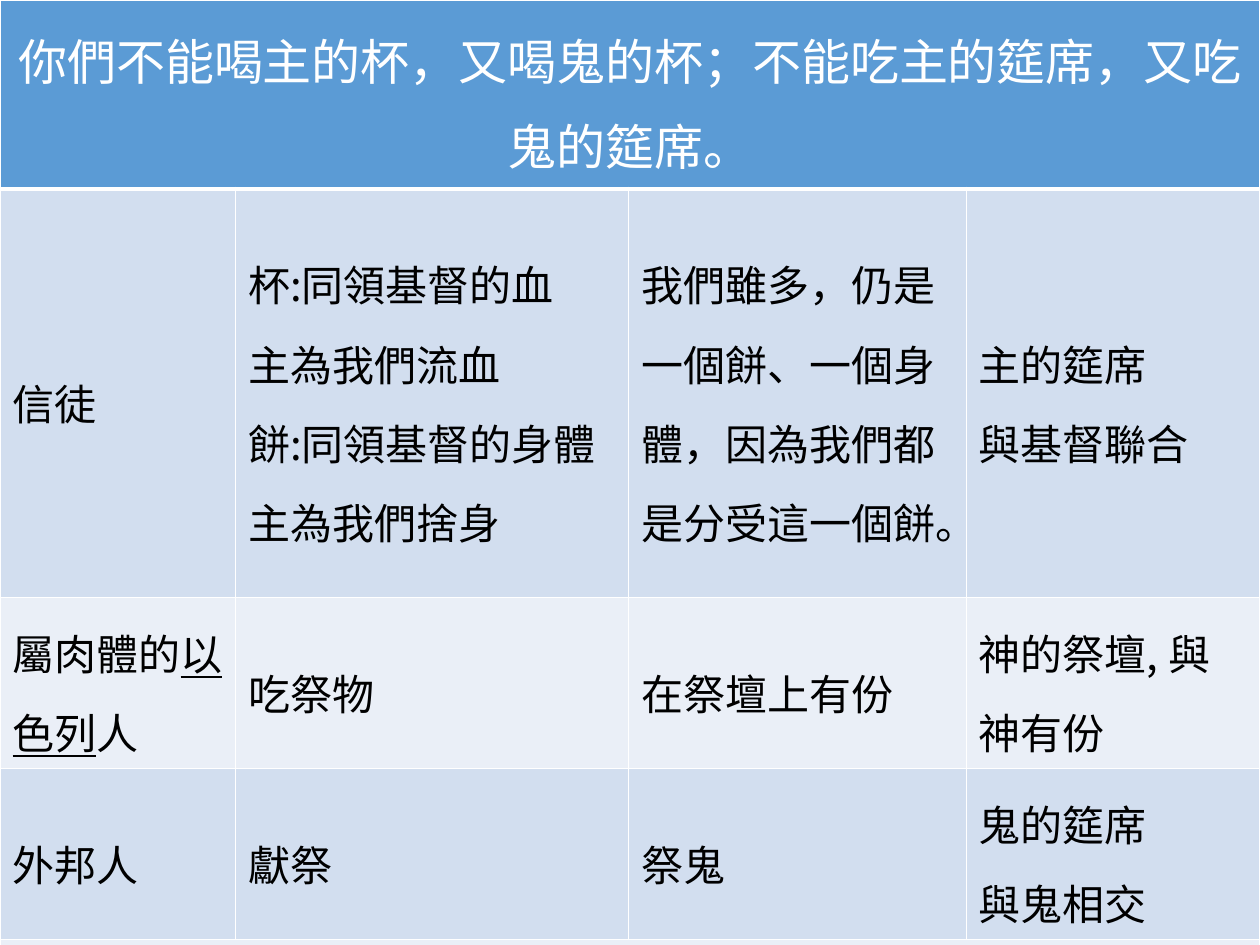
import pptx
import pptx.dml.color
import pptx.enum.text
import pptx.oxml
import pptx.oxml.ns
import pptx.util

SLIDE_WIDTH, SLIDE_HEIGHT = 10, 7.5
FONT = "Noto Sans CJK SC"
WHITE, BLACK = "FFFFFF", "000000"
HEADER_FILL, BAND_FILLS = "5B9BD5", ("D2DEEF", "EAEFF7")

COLUMN_SHARES = (0.187, 0.312, 0.268, 0.233)
ROW_SHARES = (0.2, 0.32, 0.15, 0.16, 0.17)

VERSE = "你們不能喝主的杯，又喝鬼的杯；不能吃主的筵席，又吃鬼的筵席。"
# Each cell is a list of paragraphs; underscores enclose underlined names.
COMPARISON = [
    [["信徒"],
     ["杯:同領基督的血", "主為我們流血", "餅:同領基督的身體", "主為我們捨身"],
     ["我們雖多，仍是一個餅、一個身體，因為我們都是分受這一個餅。"],
     ["主的筵席", "與基督聯合"]],
    [["屬肉體的_以色列_人"], ["吃祭物"], ["在祭壇上有份"], ["神的祭壇, 與神有份"]],
    [["外邦人"], ["獻祭"], ["祭鬼"], ["鬼的筵席", "與鬼相交"]],
]


def color(hex_value):
    return pptx.dml.color.RGBColor.from_string(hex_value)


def style_cell(cell, fill, bottom_width=1, top_width=1):
    """Draw the white grid lines first, then the fill, as the schema orders them."""
    properties = cell._tc.get_or_add_tcPr()
    for side, width in (("L", 1), ("R", 1), ("T", top_width), ("B", bottom_width)):
        properties.append(pptx.oxml.parse_xml(
            f'<a:ln{side} {pptx.oxml.ns.nsdecls("a")} w="{pptx.util.Pt(width)}">'
            f'<a:solidFill><a:srgbClr val="{WHITE}"/></a:solidFill></a:ln{side}>'))
    cell.fill.solid()
    cell.fill.fore_color.rgb = color(fill)
    cell.vertical_anchor = pptx.enum.text.MSO_ANCHOR.MIDDLE


def add_run(paragraph, text, size, text_color, underlined):
    run = paragraph.add_run()
    run.text = text
    run.font.size = pptx.util.Pt(size)
    run.font.bold = False
    run.font.name = FONT
    run.font.color.rgb = color(text_color)
    if underlined:
        run.font.underline = True
    run.font._element.append(pptx.oxml.parse_xml(
        f'<a:ea {pptx.oxml.ns.nsdecls("a")} typeface="{FONT}"/>'))


def write_cell(cell, lines, size=24, text_color=BLACK, spacing=1.3, align=None):
    frame = cell.text_frame
    for number, line in enumerate(lines):
        paragraph = frame.add_paragraph() if number else frame.paragraphs[0]
        paragraph.line_spacing = spacing
        paragraph.alignment = align
        for part, text in enumerate(line.split("_")):
            add_run(paragraph, text, size, text_color, part % 2 == 1)


def add_comparison_table(slide, left, top, width, height):
    table = slide.shapes.add_table(
        len(ROW_SHARES), len(COLUMN_SHARES),
        *(pptx.util.Inches(length) for length in (left, top, width, height))).table
    for column, share in zip(table.columns, COLUMN_SHARES):
        column.width = pptx.util.Inches(width * share)
    for row, share in zip(table.rows, ROW_SHARES):
        row.height = pptx.util.Inches(height * share)

    last_row, last_column = len(ROW_SHARES) - 1, len(COLUMN_SHARES) - 1
    for row_number, row in enumerate(table.rows):
        fill = BAND_FILLS[(row_number - 1) % 2] if row_number else HEADER_FILL
        for cell in row.cells:
            style_cell(cell, fill, bottom_width=1 if row_number else 3,
                       top_width=3 if row_number == 1 else 1)
    for full_row in (0, last_row):
        table.cell(full_row, 0).merge(table.cell(full_row, last_column))

    write_cell(table.cell(0, 0), [VERSE], 28, WHITE, 1.2,
               pptx.enum.text.PP_ALIGN.CENTER)
    for row_number, group in enumerate(COMPARISON, start=1):
        for column_number, lines in enumerate(group):
            write_cell(table.cell(row_number, column_number), lines)


def main():
    presentation = pptx.Presentation()
    presentation.slide_width = pptx.util.Inches(SLIDE_WIDTH)
    presentation.slide_height = pptx.util.Inches(SLIDE_HEIGHT)
    blank_layout = presentation.slide_layouts[6]
    slide = presentation.slides.add_slide(blank_layout)
    add_comparison_table(slide, 0, 0, SLIDE_WIDTH, SLIDE_HEIGHT)
    presentation.save("out.pptx")


if __name__ == "__main__":
    main()
